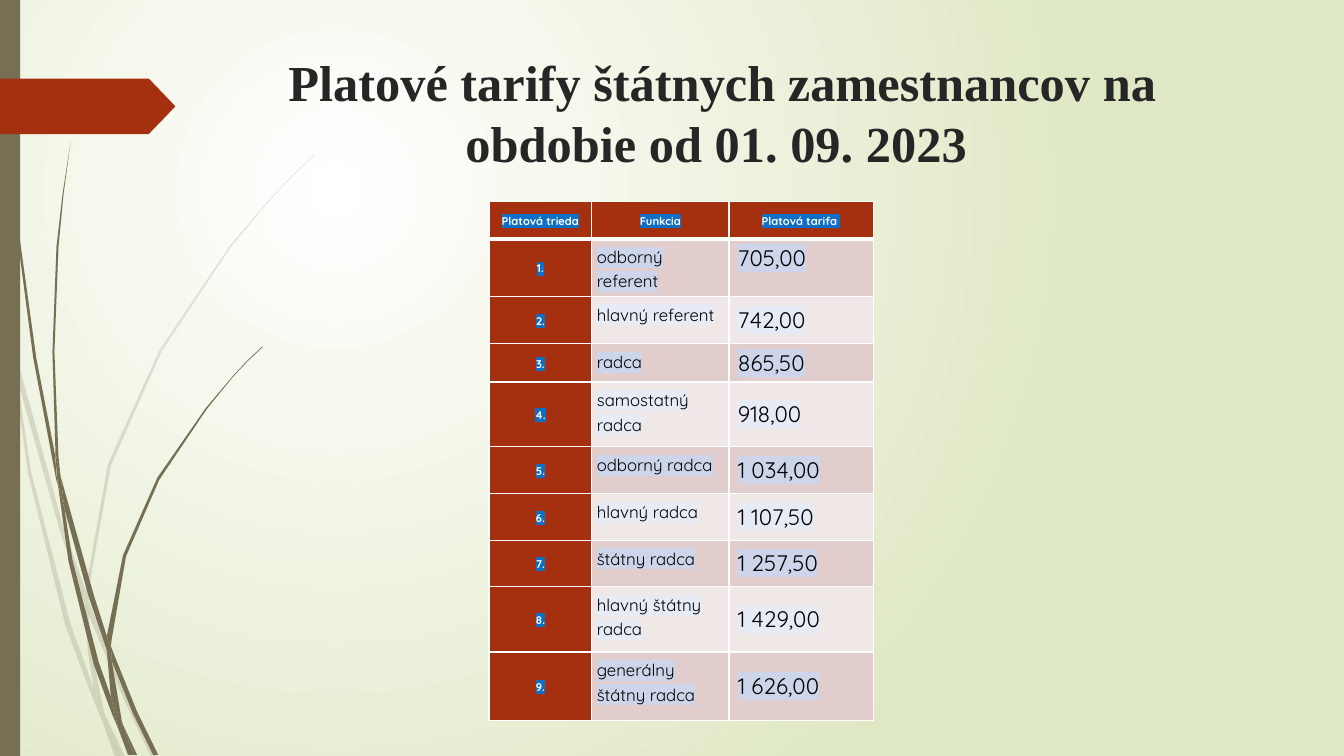
from lxml.etree import SubElement
from pptx import Presentation
from pptx.dml.color import RGBColor
from pptx.enum.shapes import MSO_SHAPE
from pptx.enum.text import MSO_ANCHOR, PP_ALIGN
from pptx.oxml.ns import qn
from pptx.util import Inches, Pt

WHITE = RGBColor(0xFF, 0xFF, 0xFF)
BLACK = RGBColor(0x00, 0x00, 0x00)
PALE_GREEN = RGBColor(0xDF, 0xE8, 0xC4)
OLIVE = RGBColor(0x76, 0x6F, 0x54)
RUST = RGBColor(0xA5, 0x30, 0x10)
TITLE_GREY = RGBColor(0x26, 0x26, 0x26)
BLUE = RGBColor(0x0F, 0x6F, 0xC6)
BANDS = [
    (RGBColor(0xE1, 0xCD, 0xCC), RGBColor(0xCC, 0xD5, 0xEA)),
    (RGBColor(0xF0, 0xE8, 0xE7), RGBColor(0xE7, 0xEB, 0xF5)),
]

PALE_GRASS = [
    [(0.11, 3.5), (0.09, 3.22), (0, 2.82), (0, 2.99), (0.1, 3.44)],
    [(0.58, 5.22), (0.84, 5.99), (0.85, 5.86), (0.62, 5.2), (0.14, 3.45), (0.17, 3.76)],
    [(0.92, 6.07), (0.88, 5.96), (0.88, 6.1), (1.23, 6.94), (1.5, 7.51), (1.55, 7.51), (1.27, 6.92)],
    [(1.19, 7.51), (1.24, 7.51), (1.05, 7.11)],
    [(0.93, 6.83), (0.7, 6.19), (0.31, 4.69), (0.17, 3.76), (0.11, 3.5), (0.28, 4.7), (0.65, 6.21),
     (0.92, 6.93), (1.01, 7.14), (0.99, 7.07)],
    [(0.84, 5.99), (0.87, 6.46), (0.93, 6.83), (0.96, 6.92), (1.05, 7.11), (1.03, 7.06),
     (0.91, 6.46), (0.88, 6.1), (0.88, 6.08)],
    [(0.88, 5.84), (1.1, 4.62), (1.6, 3.49), (2.29, 2.45), (2.68, 1.98), (2.9, 1.75), (3.12, 1.54),
     (3.12, 1.53), (2.89, 1.75), (2.68, 1.97), (2.28, 2.44), (1.58, 3.48), (1.07, 4.61),
     (0.85, 5.84), (0.85, 5.86), (0.88, 5.96)],
    [(1.01, 7.14), (1.14, 7.51), (1.19, 7.51)],
    [(0.88, 6.08), (0.88, 6.1), (0.88, 5.96), (0.85, 5.86), (0.84, 5.99)],
    [(0.96, 6.92), (0.93, 6.83), (0.99, 7.07), (1.01, 7.14), (1.19, 7.51), (1.05, 7.11)],
]
DARK_GRASS = [
    [(0.07, 1.1), (0.17, 2.33), (0.33, 3.55), (0.56, 4.77), (0.57, 4.81), (0.55, 4.57),
     (0.55, 4.53), (0.36, 3.55), (0.19, 2.32), (0.08, 1.09), (0.05, 0.48), (0.04, 0), (0.03, 0),
     (0.04, 0.48)],
    [(0.88, 5.92), (1.06, 6.45), (1.06, 6.33), (1.06, 6.31), (0.93, 5.9), (0.6, 4.72), (0.64, 5.05)],
    [(1.13, 6.49), (1.1, 6.41), (1.11, 6.56), (1.32, 7.08), (1.52, 7.49), (1.57, 7.49), (1.36, 7.06)],
    [(1.1, 6.91), (0.98, 6.57), (0.72, 5.56), (0.64, 5.05), (0.57, 4.77), (0.68, 5.57),
     (0.93, 6.59), (1.11, 7.08), (1.17, 7.22), (1.16, 7.17)],
    [(0.6, 4.72), (0.58, 4.53), (0.54, 3.49), (0.58, 2.45), (0.63, 1.93), (0.7, 1.41),
     (0.62, 1.93), (0.56, 2.45), (0.52, 3.49), (0.55, 4.49)],
    [(1.33, 7.49), (1.36, 7.49), (1.22, 7.19)],
    [(0.57, 4.77), (0.64, 5.05), (0.6, 4.72), (0.55, 4.49), (0.55, 4.53)],
    [(1.11, 6.33), (1.25, 5.52), (1.58, 4.76), (2.05, 4.06), (2.31, 3.74), (2.45, 3.59),
     (2.61, 3.44), (2.6, 3.44), (2.45, 3.58), (2.31, 3.73), (2.04, 4.05), (1.56, 4.74),
     (1.22, 5.51), (1.06, 6.31), (1.1, 6.41)],
    [(1.17, 7.22), (1.27, 7.49), (1.31, 7.49)],
    [(1.06, 6.45), (1.1, 6.91), (1.16, 7.06), (1.22, 7.19), (1.21, 7.16), (1.11, 6.56), (1.09, 6.51)],
    [(1.06, 6.45), (1.09, 6.51), (1.11, 6.56), (1.1, 6.41), (1.06, 6.31)],
    [(1.16, 7.06), (1.1, 6.91), (1.16, 7.17), (1.17, 7.22), (1.3, 7.49), (1.33, 7.49), (1.22, 7.19)],
]

TITLE = "Platové tarify štátnych zamestnancov na obdobie od 01. 09. 2023 "
HEADERS = ["Platová trieda", "Funkcia", "Platová tarifa "]
TARIFFS = [
    ("odborný referent", "705,00", 0.57),
    ("hlavný referent", "742,00", 0.47),
    ("radca", "865,50", 0.38),
    ("samostatný radca", "918,00", 0.64),
    ("odborný radca", "1 034,00", 0.47),
    ("hlavný radca", "1 107,50", 0.46),
    ("štátny radca", "1 257,50", 0.46),
    ("hlavný štátny radca", "1 429,00", 0.65),
    ("generálny štátny radca", "1 626,00", 0.68),
]
COLUMN_WIDTHS = [1.02, 1.36, 1.43]
HEADER_HEIGHT = 0.37
LABEL_STYLE = {"size": Pt(8), "bold": True, "color": WHITE, "align": PP_ALIGN.CENTER,
               "spacing": 1.15, "margins": (0.03, 0.02), "anchor": MSO_ANCHOR.MIDDLE}
POSITION_STYLE = {"size": Pt(12), "bold": False, "color": BLACK, "align": PP_ALIGN.LEFT,
                  "spacing": 1.15, "margins": (0.05, 0.05), "anchor": MSO_ANCHOR.TOP}
TARIFF_STYLE = {**POSITION_STYLE, "size": Pt(16), "spacing": 1.0,
                "margins": (0.09, 0.05), "anchor": MSO_ANCHOR.MIDDLE}


def paint_background(slide):
    """Fill the slide with a circular gradient centred in its upper left quarter."""
    fill = slide.background.fill
    fill.gradient()
    for stop, color in zip(fill.gradient_stops, (WHITE, PALE_GREEN)):
        stop.color.rgb = color
    gradient = slide.element.find(".//" + qn("a:gradFill"))
    linear = gradient.find(qn("a:lin"))
    circle = gradient.makeelement(qn("a:path"), {"path": "circle"})
    SubElement(circle, qn("a:fillToRect"), l="50000", t="50000", r="100000", b="100000")
    gradient.replace(linear, circle)


def paint_shape(shape, color, opacity=100):
    """Give a shape a flat fill without outline or shadow."""
    shape.shadow.inherit = False
    shape.fill.solid()
    shape.fill.fore_color.rgb = color
    shape.line.fill.background()
    if opacity < 100:
        color_node = shape.element.spPr.find(".//" + qn("a:srgbClr"))
        SubElement(color_node, qn("a:alpha"), val=str(opacity * 1000))


def add_grass_piece(slide, outline, opacity):
    """Draw one closed piece of a blade of grass."""
    points = [(Inches(x), Inches(y)) for x, y in outline]
    builder = slide.shapes.build_freeform(*points[0])
    builder.add_line_segments(points[1:], close=True)
    paint_shape(builder.convert_to_shape(), OLIVE, opacity)


def add_decoration(slide, height):
    """Draw the grass, the side bar and the arrow tab on the left edge."""
    for pieces, opacity in ((PALE_GRASS, 20), (DARK_GRASS, 100)):
        for outline in pieces:
            add_grass_piece(slide, outline, opacity)
    bar = slide.shapes.add_shape(MSO_SHAPE.RECTANGLE, 0, 0, Inches(0.2), height)
    paint_shape(bar, OLIVE)
    tab = slide.shapes.add_shape(
        MSO_SHAPE.PENTAGON, 0, Inches(0.78), Inches(1.74), Inches(0.55))
    tab.adjustments[0] = 0.48
    paint_shape(tab, RUST)


def add_title(slide, left, top, width, height):
    """Place the centred slide title."""
    frame = slide.shapes.add_textbox(left, top, width, height).text_frame
    frame.word_wrap = True
    frame.vertical_anchor = MSO_ANCHOR.TOP
    paragraph = frame.paragraphs[0]
    paragraph.alignment = PP_ALIGN.CENTER
    run = paragraph.add_run()
    run.text = TITLE
    for name, value in {"name": "Times New Roman", "size": Pt(36), "bold": True}.items():
        setattr(run.font, name, value)
    run.font.color.rgb = TITLE_GREY


def add_borders(cell, bottom_width):
    """Draw white cell borders."""
    properties = cell._tc.get_or_add_tcPr()
    for side, width in (("L", 1), ("R", 1), ("T", 1), ("B", bottom_width)):
        line = SubElement(properties, qn(f"a:ln{side}"), w=str(Pt(width)))
        SubElement(SubElement(line, qn("a:solidFill")), qn("a:srgbClr"), val=str(WHITE))


def fill_cell(cell, text, style, fill, highlight, bottom_width=1):
    """Write highlighted text into a cell and format the cell."""
    add_borders(cell, bottom_width)
    cell.fill.solid()
    cell.fill.fore_color.rgb = fill
    horizontal, vertical = style["margins"]
    cell.margin_left = cell.margin_right = Inches(horizontal)
    cell.margin_top = cell.margin_bottom = Inches(vertical)
    cell.vertical_anchor = style["anchor"]
    paragraph = cell.text_frame.paragraphs[0]
    paragraph.alignment = style["align"]
    paragraph.line_spacing = style["spacing"]
    run = paragraph.add_run()
    run.text = text
    for name, value in {"name": "Quicksand", "size": style["size"], "bold": style["bold"]}.items():
        setattr(run.font, name, value)
    run.font.color.rgb = style["color"]
    color_node = run.font._element.find(qn("a:solidFill"))
    marker = color_node.makeelement(qn("a:highlight"), {})
    SubElement(marker, qn("a:srgbClr"), val=str(highlight))
    color_node.addnext(marker)


def add_tariff_table(slide, left, top):
    """Build the table of pay classes, positions and tariffs."""
    heights = [HEADER_HEIGHT] + [height for position, tariff, height in TARIFFS]
    table = slide.shapes.add_table(
        len(heights), len(COLUMN_WIDTHS), left, top,
        Inches(sum(COLUMN_WIDTHS)), Inches(sum(heights))).table
    for column, width in zip(table.columns, COLUMN_WIDTHS):
        column.width = Inches(width)
    for row, height in zip(table.rows, heights):
        row.height = Inches(height)
    for index, header in enumerate(HEADERS):
        fill_cell(table.cell(0, index), header, LABEL_STYLE, RUST, BLUE, bottom_width=3)
    for number, (position, tariff, height) in enumerate(TARIFFS, 1):
        fill, highlight = BANDS[(number - 1) % 2]
        fill_cell(table.cell(number, 0), f"{number}.", LABEL_STYLE, RUST, BLUE)
        fill_cell(table.cell(number, 1), position, POSITION_STYLE, fill, highlight)
        fill_cell(table.cell(number, 2), tariff, TARIFF_STYLE, fill, highlight)
    table.cell(1, 2).vertical_anchor = MSO_ANCHOR.TOP


def main():
    """Create and save the presentation."""
    presentation = Presentation()
    presentation.slide_width, presentation.slide_height = Inches(13.33), Inches(7.5)
    slide = presentation.slides.add_slide(presentation.slide_layouts[6])
    paint_background(slide)
    add_decoration(slide, presentation.slide_height)
    add_title(slide, Inches(2.29), Inches(0.46), Inches(9.75), Inches(1.4))
    add_tariff_table(slide, Inches(4.85), Inches(2))
    presentation.save("out.pptx")


if __name__ == "__main__":
    main()
